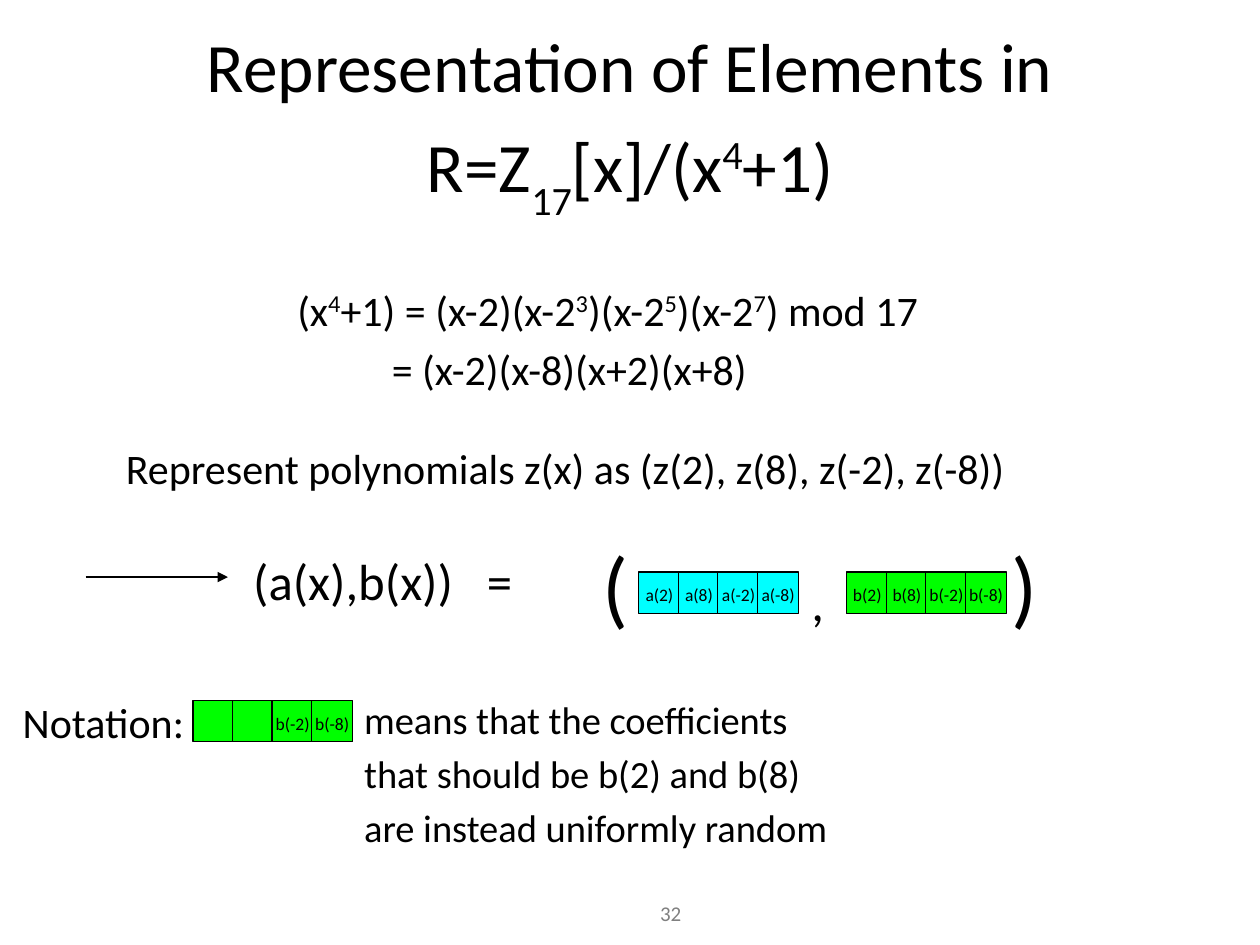
import pptx
import pptx.util
import pptx.dml.color
import pptx.enum.shapes
import pptx.enum.text
import pptx.oxml.ns
from lxml import etree

Pt = pptx.util.Pt
ALIGN = pptx.enum.text.PP_ALIGN
ANCHOR = pptx.enum.text.MSO_ANCHOR
COLORS = {"black": "000000", "gray": "808080", "cyan": "00FFFF", "green": "00FF00"}
FONT = "Calibri"
SPACING = 1.17
INSETS = (6.5, 3, 6.5, 3)
CELL_SIZE, CELL_PITCH = 23.6, 22.6

# Content: a paragraph is a list of runs, (text, baseline shift in percent)
UP, DOWN = 33, -33
TITLE = [("Representation of Elements in R=Z", 0), ("17", DOWN), ("[x]/(x", 0),
         ("4", UP), ("+1)", 0)]
FACTORS = [("(x", 0), ("4", UP), ("+1) = (x-2)(x-2", 0), ("3", UP), (")(x-2", 0),
           ("5", UP), (")(x-2", 0), ("7", UP), (") mod 17", 0)]
EXPANDED = [("= (x-2)(x-8)(x+2)(x+8)", 0)]
MEANING = ["means that the coefficients", "that should be b(2) and b(8)",
           "are instead uniformly random"]

# Text boxes: left, top, width, height, size, paragraphs
BODY_TEXTS = [
    (65.5, 244.8, 604, 37, 24, ["Represent polynomials z(x) as (z(2), z(8), z(-2), z(-8))"]),
    (6.5, 390.2, 597, 72, 24, ["Notation:"]),
    (201.6, 390.2, 392, 52, 22, MEANING),
]
# Punctuation around the vectors: left, top, width, height, size, top inset, text
MARKS = [
    (457.2, 321.1, 23.8, 56.9, 29, 5, ","),
    (337.7, 298.1, 32.4, 61.2, 49, 6.5, "("),
    (571.7, 298.1, 32.4, 61.2, 49, 6.5, ")"),
]
# Rows of cells: left, top, fill, labels
VECTORS = [
    (365, 326.9, "cyan", ["a(2)", "a(8)", "a(-2)", "a(-8)"]),
    (483.8, 326.9, "green", ["b(2)", "b(8)", "b(-2)", "b(-8)"]),
    (110.2, 400.3, "green", ["", "", "b(-2)", "b(-8)"]),
]


def color(name):
    return pptx.dml.color.RGBColor.from_string(COLORS[name])


def fill_frame(frame, paragraphs, size, spacing=SPACING, align=None,
               insets=INSETS, ink="black", wrap=True):
    frame.word_wrap = wrap
    (frame.margin_left, frame.margin_top,
     frame.margin_right, frame.margin_bottom) = map(Pt, insets)
    for index, runs in enumerate(paragraphs):
        paragraph = frame.add_paragraph() if index else frame.paragraphs[0]
        paragraph.alignment = align
        paragraph.line_spacing = spacing
        paragraph.font.name = FONT
        paragraph.font.size = Pt(size)
        paragraph.font.color.rgb = color(ink)
        for text, shift in [(runs, 0)] if isinstance(runs, str) else runs:
            run = paragraph.add_run()
            run.text = text
            if shift:
                run._r.get_or_add_rPr().set("baseline", str(shift * 1000))


def add_text(slide, box, paragraphs, size, **options):
    shape = slide.shapes.add_textbox(*map(Pt, box))
    fill_frame(shape.text_frame, paragraphs, size, **options)
    return shape.text_frame


def add_vector(slide, left, top, fill, labels):
    for index, label in enumerate(labels):
        cell = slide.shapes.add_shape(
            pptx.enum.shapes.MSO_SHAPE.RECTANGLE, Pt(left + index * CELL_PITCH),
            Pt(top), Pt(CELL_SIZE), Pt(CELL_SIZE))
        cell.shadow.inherit = False
        cell.fill.solid()
        cell.fill.fore_color.rgb = color(fill)
        cell.line.color.rgb = color("black")
        cell.line.width = Pt(0.75)
        if label:
            cell.text_frame.vertical_anchor = ANCHOR.MIDDLE
            fill_frame(cell.text_frame, [label], 10, align=ALIGN.CENTER, wrap=False)


def add_arrow(slide, start_x, end_x, y):
    arrow = slide.shapes.add_connector(
        pptx.enum.shapes.MSO_CONNECTOR.STRAIGHT, Pt(start_x), Pt(y), Pt(end_x), Pt(y))
    arrow.line.color.rgb = color("black")
    arrow.line.width = Pt(0.75)
    qn = pptx.oxml.ns.qn
    etree.SubElement(arrow.line._get_or_add_ln(), qn("a:tailEnd"), type="triangle")
    etree.SubElement(arrow._element.spPr, qn("a:effectLst"))


def main():
    qn = pptx.oxml.ns.qn
    presentation = pptx.Presentation()
    presentation.slide_width, presentation.slide_height = Pt(720), Pt(540)
    slide = presentation.slides.add_slide(presentation.slide_layouts[6])

    # Title and page number
    title = add_text(slide, (36, 6.5, 648, 119.5), [TITLE], 39.6,
                     align=ALIGN.CENTER, insets=(0, 0, 0, 0))
    title.vertical_anchor = ANCHOR.MIDDLE
    add_text(slide, (339, 511, 88.6, 28.8), ["32"], 12, spacing=1,
             align=ALIGN.CENTER, insets=(7.2, 3.6, 7.2, 3.6), ink="gray")

    # Factorisation, with the second line indented to its equals sign
    factors = add_text(slide, (163.4, 154.8, 408, 67), [FACTORS, EXPANDED], 24)
    factors.paragraphs[1]._p.get_or_add_pPr().set("marL", str(Pt(54)))

    # Explanations
    for *box, size, paragraphs in BODY_TEXTS:
        add_text(slide, box, paragraphs, size)

    # Ciphertext equation, with a tab stop before the equals sign
    equation = add_text(slide, (138.2, 305.3, 196, 46.8), ["(a(x),b(x))\t="], 29)
    properties = equation.paragraphs[0]._p.get_or_add_pPr()
    stops = etree.Element(qn("a:tabLst"))
    etree.SubElement(stops, qn("a:tab"), pos=str(Pt(133.5)), algn="l")
    properties.find(qn("a:defRPr")).addprevious(stops)
    add_arrow(slide, 49, 130.3, 329.8)

    # Vectors and their punctuation
    for vector in VECTORS:
        add_vector(slide, *vector)
    for *box, size, top_inset, mark in MARKS:
        add_text(slide, box, [mark], size, spacing=1, insets=(6.5, top_inset, 6.5, 3))

    presentation.save("out.pptx")


if __name__ == "__main__":
    main()
